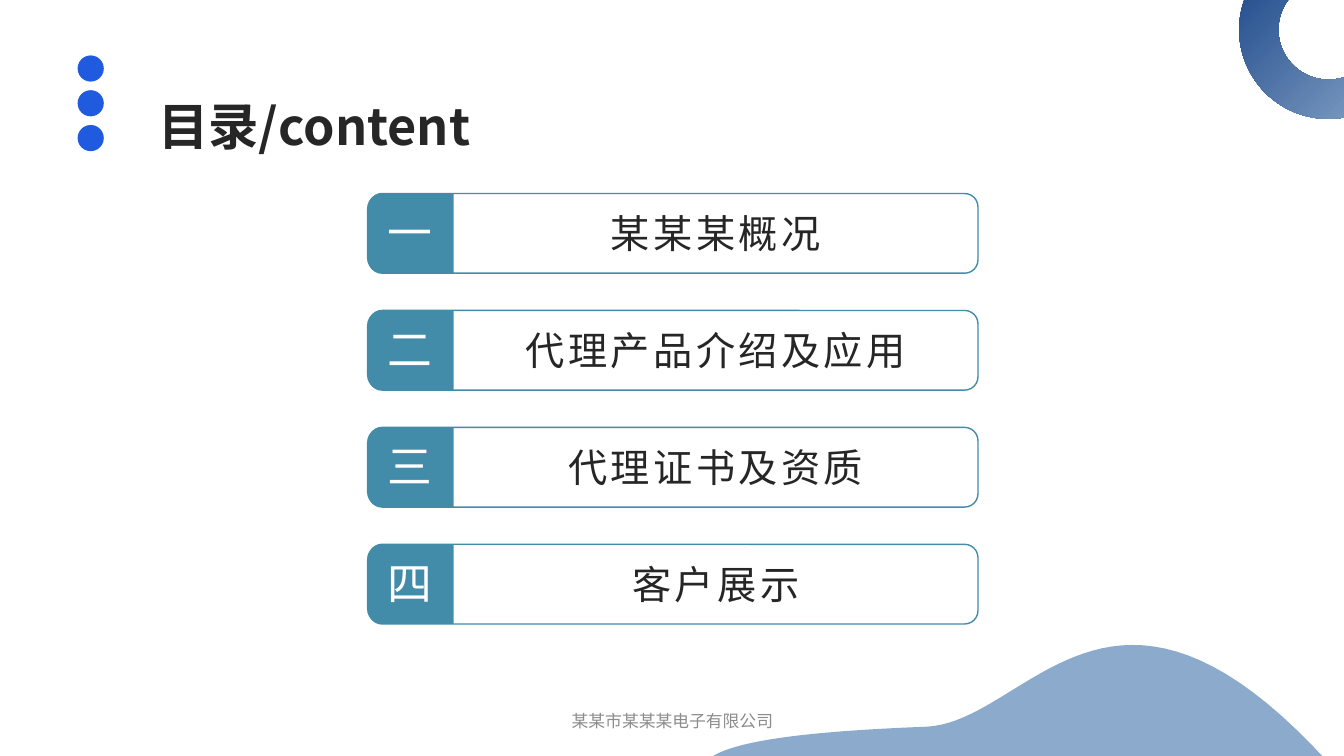
from pptx import Presentation
from pptx.dml.color import RGBColor
from pptx.enum import shapes as sh, text as tx
from pptx.oxml.ns import qn
from pptx.util import Inches, Pt
from lxml import etree

FONT = "Noto Sans CJK SC"
BLUE = RGBColor(0x1F, 0x5A, 0xDF)
NAVY = RGBColor(0x15, 0x40, 0x84)
MIST = RGBColor(0x8C, 0xAA, 0xCB)
TEAL = RGBColor(0x42, 0x8C, 0xAA)
INK = RGBColor(0x26, 0x26, 0x26)
GRAY = RGBColor(0x8C, 0x8C, 0x8C)
WHITE = RGBColor(0xFF, 0xFF, 0xFF)

ITEMS = [("一", "某某某概况"), ("二", "代理产品介绍及应用"),
         ("三", "代理证书及资质"), ("四", "客户展示")]

HEAD = {"size": Pt(36), "bold": True}
NUM = {"size": Pt(32)}
ITEM = {"size": Pt(28)}
FOOT = {"size": Pt(12)}


def add_form(parent, kind, box, fill=None):
    form = parent.add_shape(kind, *map(Inches, box))
    form.shadow.inherit = False
    form.line.fill.background()
    if fill is None:
        form.fill.background()
    else:
        form.fill.solid()
        form.fill.fore_color.rgb = fill
    return form


def add_text(parent, box, words, style, color, align=tx.PP_ALIGN.CENTER,
             space=0, fit=tx.MSO_AUTO_SIZE.SHAPE_TO_FIT_TEXT):
    frame = parent.add_textbox(*map(Inches, box)).text_frame
    frame.word_wrap = True
    frame.auto_size = fit
    para = frame.paragraphs[0]
    para.alignment = align
    run = para.add_run()
    run.text = words
    for key, value in style.items():
        setattr(run.font, key, value)
    run.font.name = FONT
    run.font.color.rgb = color
    props = run._r.get_or_add_rPr()
    etree.SubElement(props, qn("a:ea")).set("typeface", FONT)
    if space:
        props.set("spc", str(int(space * 100)))
    return frame


def add_dots(slide, left, top):
    group = slide.shapes.add_group_shape()
    for i in range(3):
        box = (left, top + i * 0.345, 0.26, 0.26)
        add_form(group.shapes, sh.MSO_SHAPE.OVAL, box, BLUE)


def add_ring(slide, box):
    ring = add_form(slide.shapes, sh.MSO_SHAPE.DONUT, box)
    ring.adjustments[0] = 0.22
    ring.fill.gradient()
    ring.fill.gradient_angle = 315
    for stop, color in zip(ring.fill.gradient_stops, (NAVY, MIST)):
        stop.color.rgb = color


def trace_curve(start, curves, steps=40):
    """Points along a chain of cubic curves."""
    points = [start]
    for a, b, end in curves:
        for i in range(1, steps + 1):
            t = i / steps
            s = 1 - t
            points.append(tuple(
                s**3 * p + 3 * s * s * t * q + 3 * s * t * t * r + t**3 * e
                for p, q, r, e in zip(start, a, b, end)))
        start = end
    return points


def add_wave(slide, left, top):
    curves = [((-0.47, 0.95), (1.2, 0.85), (2.21, 0.81)),
              ((3.22, 0.76), (4.04, -1.2), (6.19, 1.16)),
              ((6.19, 1.44), (4.17, 1.68), (3.16, 1.72)),
              ((2.15, 1.76), (0.71, 1.88), (0.12, 1.41))]
    points = [(Inches(left + x), Inches(top + y))
              for x, y in trace_curve((0.12, 1.41), curves)]
    pen = slide.shapes.build_freeform(*points[0])
    pen.add_line_segments(points[1:], close=True)
    wave = pen.convert_to_shape()
    wave.shadow.inherit = False
    wave.fill.solid()
    wave.fill.fore_color.rgb = MIST
    wave.line.fill.background()


def add_row(slide, box, mark, words):
    left, top, wide, high = box
    tab = 0.86
    parts = slide.shapes.add_group_shape().shapes
    # Outline and label
    frame = add_form(parts, sh.MSO_SHAPE.ROUNDED_RECTANGLE,
                     (left + 0.02, top, wide - 0.02, high))
    frame.line.color.rgb = TEAL
    frame.line.width = Pt(1)
    add_text(parts, (left + tab, top + 0.11, wide - tab, 0.57),
             words, ITEM, INK, space=2.5)
    # Number tab: a round-topped shape turned to face left
    shift = (tab - high) / 2
    cap = add_form(parts, sh.MSO_SHAPE.ROUND_2_SAME_RECTANGLE,
                   (left + shift, top - shift, high, tab), TEAL)
    cap.rotation = 270
    cap.adjustments[0] = 0.19
    add_text(parts, (left, top + 0.06, tab, 0.64), mark, NUM, WHITE, space=3)


def add_list(slide, left, top, wide):
    for i, (mark, words) in enumerate(ITEMS):
        add_row(slide, (left, top + i * 1.16, wide, 0.79), mark, words)


def main():
    deck = Presentation()
    deck.slide_width, deck.slide_height = Inches(13.33), Inches(7.5)
    slide = deck.slides.add_slide(deck.slide_layouts[6])
    # Decoration
    add_dots(slide, 0.77, 0.55)
    add_ring(slide, (12.29, -0.59, 1.77, 1.77))
    add_wave(slide, 6.98, 6.4)
    # Title and contents
    add_text(slide.shapes, (1.47, 0.89, 3.56, 0.71), "目录/content",
             HEAD, INK, align=tx.PP_ALIGN.LEFT)
    add_list(slide, 3.64, 1.92, 6.06)
    # Footer
    foot = add_text(slide.shapes, (4.42, 6.95, 4.5, 0.4),
                    "某某市某某某电子有限公司", FOOT, GRAY,
                    fit=tx.MSO_AUTO_SIZE.NONE)
    foot.vertical_anchor = tx.MSO_ANCHOR.MIDDLE
    deck.save("out.pptx")


if __name__ == "__main__":
    main()
